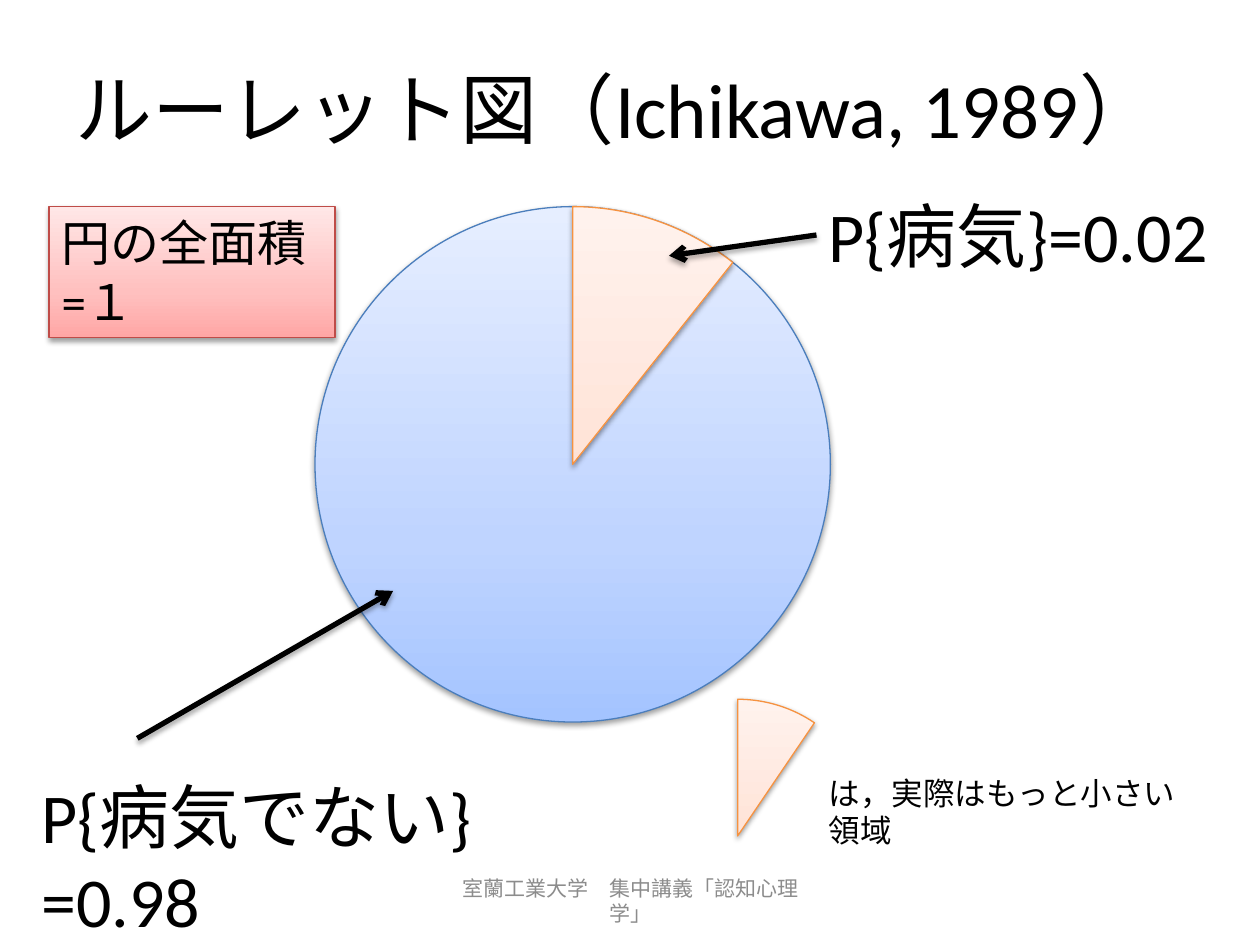
from dataclasses import dataclass
from lxml.etree import SubElement
from pptx import Presentation
from pptx.dml.color import RGBColor as RGB
from pptx.enum.shapes import MSO_CONNECTOR as Link, MSO_SHAPE as Kind
from pptx.enum.text import MSO_ANCHOR as Anchor, PP_ALIGN as Align
from pptx.oxml.ns import qn
from pptx.util import Inches, Pt


@dataclass(frozen=True)
class Theme:
    font: str = "Calibri"
    ink: str = "000000"
    gray: str = "8C8C8C"
    title: int = 44
    label: int = 40
    total: int = 28
    note: int = 18
    foot: int = 12
    # outline, then gradient colours from bottom to top
    blue: tuple = ("4B7EBC", "A4C4FF", "BFD4FF", "E6EEFF")
    peach: tuple = ("F69240", "FFD2BD", "FFDED0", "FFF2ED")
    rose: tuple = ("BF4C48", "FFA6A5", "FFC0BF", "FFE7E7")
    stops: tuple = (0, 35, 100)


T = Theme()
WIDE, HIGH = 10, 7.5
LEFT, RIGHT, TOP, LOW = 0.39, 6.48, 1.64, 6.09
WHEEL = (2.5, TOP, 4.09, 4.09)
KEY = (4.77, 5.55, 2.17, 2.17)
TITLE = ("ルーレット図（Ichikawa, 1989）", (LEFT, 0.23, 9, 1.25))
TOTAL = (["円の全面積", "=１"], (LEFT, TOP, 2.27, 1.04))
SICK = ("P{病気}=0.02", (RIGHT, 1.48, 3.24, 0.77))
WELL = ("P{病気でない}=0.98", (0.23, LOW, 4.78, 0.77))
NOTE = ("は，実際はもっと小さい領域", (RIGHT, LOW, 3.17, 0.4))
FOOT = ("室蘭工業大学　集中講義「認知心理学」", (3.42, 6.95, 3.17, 0.4))
SLICES = [(WHEEL, 231.56), (KEY, 235.85)]  # box, start angle
ARROWS = {"sick": ((RIGHT, 1.87), (5.31, 2.03)),
          "well": ((1.09, 5.86), (3.12, 4.69))}

deck = Presentation()
deck.slide_width, deck.slide_height = Inches(WIDE), Inches(HIGH)
slide = deck.slides.add_slide(deck.slide_layouts[5])
shapes = slide.shapes


def inch(box):
    return [Inches(n) for n in box]


def shade(shape, alpha, dist):
    old = shape._element.spPr.find(qn("a:effectLst"))
    if old is not None:
        shape._element.spPr.remove(old)
    glow = SubElement(SubElement(shape._element.spPr, qn("a:effectLst")),
                      qn("a:outerShdw"), blurRad=str(Pt(3.1)),
                      dist=str(Pt(dist)), dir="5400000", rotWithShape="0")
    ink = SubElement(glow, qn("a:srgbClr"), val=T.ink)
    SubElement(ink, qn("a:alpha"), val=str(alpha * 1000))


def paint(kind, box, tones):
    shape = shapes.add_shape(kind, *inch(box))
    edge, *fills = tones
    shape.fill.gradient()
    shape.fill.gradient_angle = 90
    stops = shape._element.spPr.find(".//" + qn("a:gsLst"))
    for old in list(stops):
        stops.remove(old)
    for pos, tone in zip(T.stops, fills):
        stop = SubElement(stops, qn("a:gs"), pos=str(pos * 1000))
        SubElement(stop, qn("a:srgbClr"), val=tone)
    shape.line.color.rgb = RGB.from_string(edge)
    shape.line.width = Pt(0.75)
    shade(shape, 38, 1.6)
    return shape


def write(shape, lines, size, tone=T.ink, align=Align.LEFT, anchor=Anchor.TOP):
    frame = shape.text_frame
    frame.word_wrap, frame.vertical_anchor = True, anchor
    for i, line in enumerate(lines):
        para = frame.add_paragraph() if i else frame.paragraphs[0]
        para.alignment = align
        run = para.add_run()
        run.text = line
        run.font.name, run.font.size = T.font, Pt(size)
        run.font.color.rgb = RGB.from_string(tone)


def label(item, size, **look):
    text, box = item
    shape = shapes.add_textbox(*inch(box))
    write(shape, [text], size, **look)
    return shape


def arrow(ends, source=None):
    start, stop = ends
    line = shapes.add_connector(Link.STRAIGHT, *inch(start + stop))
    if source is not None:
        line.begin_connect(source, 1)
    line.line.color.rgb = RGB.from_string(T.ink)
    line.line.width = Pt(3)
    SubElement(line.line._get_or_add_ln(), qn("a:tailEnd"), type="arrow")
    shade(line, 35, 1.8)


def slice_of(box, start):
    """Draw a mirrored wedge from the start angle up to twelve o'clock."""
    pie = paint(Kind.PIE, box, T.peach)
    for i, angle in enumerate((start, 270)):
        pie.adjustments[i] = angle * 0.6
    pie._element.spPr.xfrm.set("flipH", "1")


head = shapes.title
head.left, head.top, head.width, head.height = inch(TITLE[1])
write(head, [TITLE[0]], T.title, align=Align.CENTER, anchor=Anchor.MIDDLE)

paint(Kind.OVAL, WHEEL, T.blue)
slice_of(*SLICES[0])
sick = label(SICK, T.label)
arrow(ARROWS["sick"], sick)
label(WELL, T.label)
arrow(ARROWS["well"])
slice_of(*SLICES[1])
label(NOTE, T.note)
write(paint(Kind.RECTANGLE, TOTAL[1], T.rose), TOTAL[0], T.total)
label(FOOT, T.foot, tone=T.gray, align=Align.CENTER, anchor=Anchor.MIDDLE)

deck.save("out.pptx")
